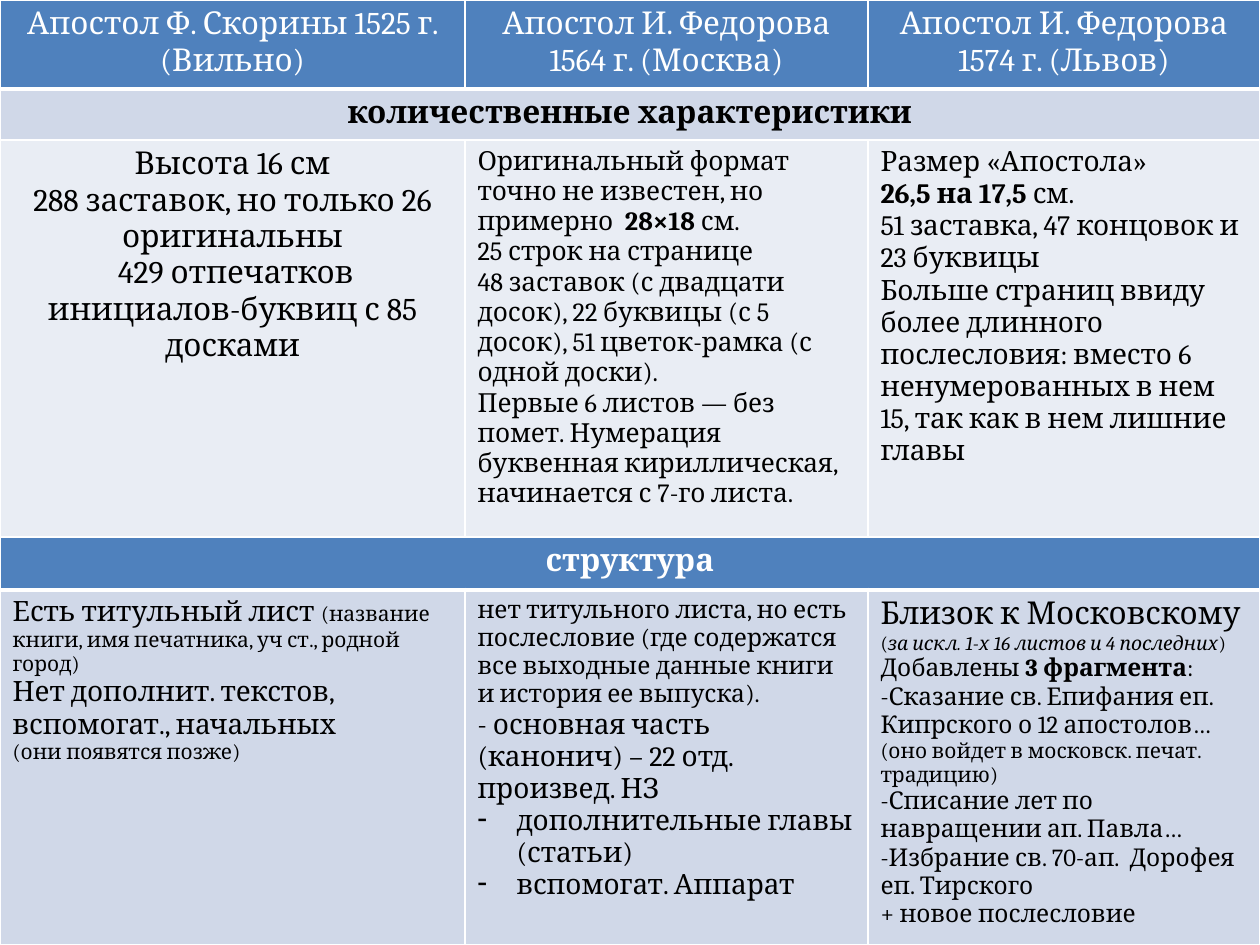
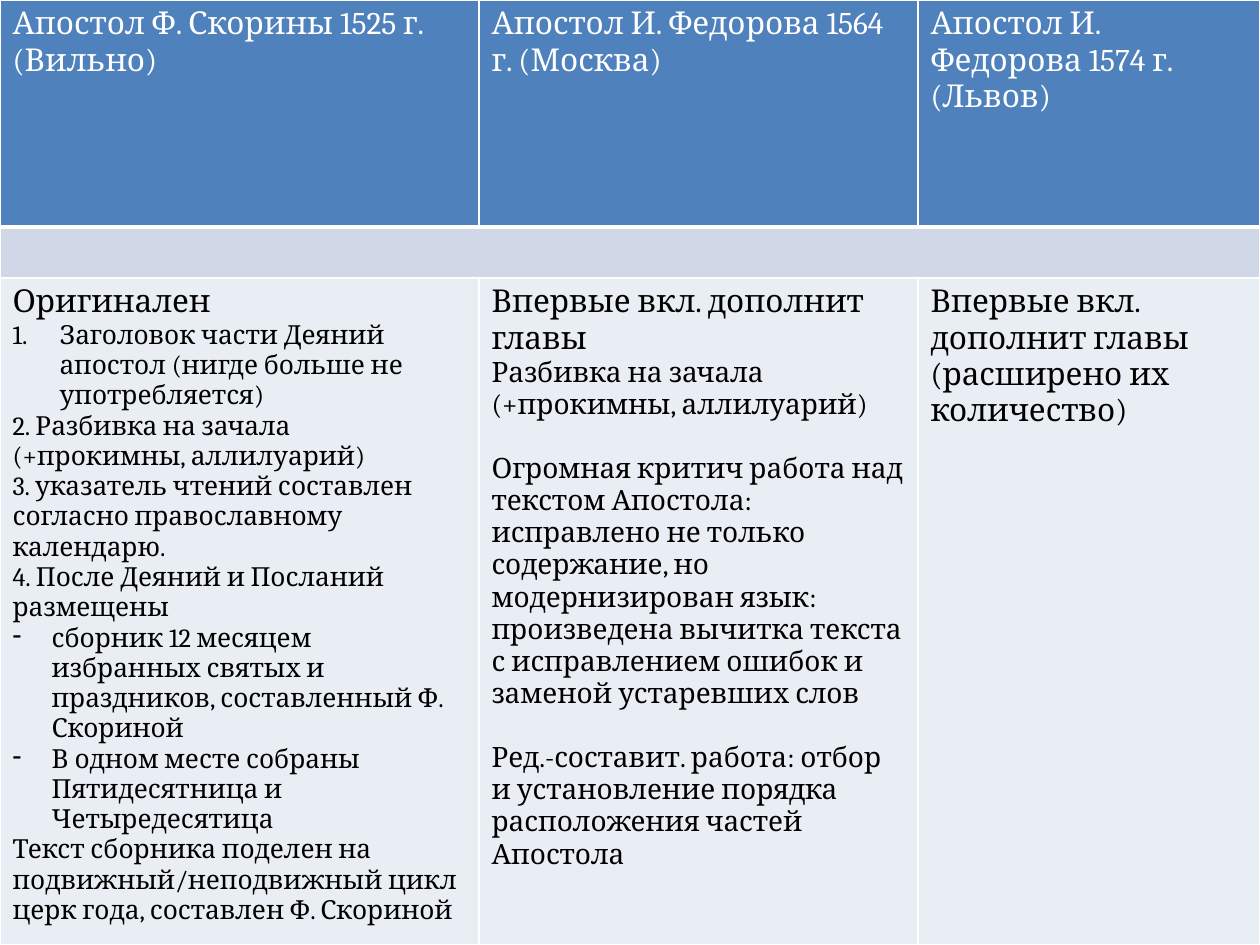
import dataclasses

import lxml.etree
import pptx
import pptx.dml.color
import pptx.enum.text
import pptx.oxml.ns
import pptx.util

EMU_PER_PIXEL = 914400 // 126
FONT = "Cambria"
WHITE, BLACK = "FFFFFF", "000000"
HEADER, BAND, LIGHT = "4F81BD", "D0D8E8", "E9EDF4"
EDGES = ("lnL", "lnR", "lnT", "lnB")
CENTER = pptx.enum.text.PP_ALIGN.CENTER
EDITIONS = (
    "Апостол Ф. Скорины 1525 г. (Вильно)",
    "Апостол И. Федорова 1564 г. (Москва)",
    "Апостол И. Федорова 1574 г. (Львов)",
)


@dataclasses.dataclass
class Line:
    runs: list
    marker: str = ""
    indent: int = 0
    gap: int = 0
    align: object = None


def px(value):
    return pptx.util.Emu(value * EMU_PER_PIXEL)


def color(value):
    return pptx.dml.color.RGBColor.from_string(value)


def line(text, size, style="", **options):
    return Line([(text, size, style)], **options)


def lines(size, *texts, **options):
    return [line(text, size, **options) for text in texts]


def dashes(size, *texts):
    return lines(size, *texts, marker="-", indent=39)


def add_element(parent, tag, **attributes):
    element = lxml.etree.SubElement(parent, pptx.oxml.ns.qn(f"a:{tag}"))
    for key, value in attributes.items():
        element.set(key, str(value))
    return element


def set_marker(paragraph, marker, indent):
    properties = paragraph._p.get_or_add_pPr()
    properties.set("marL", str(px(indent)))
    properties.set("indent", str(-px(indent)))
    if marker == "1.":
        add_element(properties, "buAutoNum", type="arabicPeriod")
    else:
        add_element(properties, "buChar", char=marker)


def set_font(font, size, style):
    font.size = pptx.util.Pt(size)
    font.bold = "b" in style
    font.italic = "i" in style


def write_lines(text_frame, content, text_color):
    for index, item in enumerate(content):
        paragraph = text_frame.paragraphs[0] if index == 0 else text_frame.add_paragraph()
        if item.align is not None:
            paragraph.alignment = item.align
        if item.gap:
            paragraph.space_before = px(item.gap)
        if item.marker:
            set_marker(paragraph, item.marker, item.indent)
        paragraph.font.name = FONT
        paragraph.font.color.rgb = color(text_color)
        for text, size, style in item.runs:
            run = paragraph.add_run()
            run.text = text
            if len(item.runs) > 1:
                set_font(run.font, size, style)
            else:
                set_font(paragraph.font, size, style)


def style_cell(cell, fill, row):
    for edge in EDGES:
        thick = (row, edge) in ((0, "lnB"), (1, "lnT"))
        border = add_element(cell._tc.get_or_add_tcPr(), edge, w=pptx.util.Pt(3 if thick else 1))
        add_element(add_element(border, "solidFill"), "srgbClr", val=WHITE)
    cell.fill.solid()
    cell.fill.fore_color.rgb = color(fill)


def add_comparison(slide, top, widths, heights, rows):
    frame = slide.shapes.add_table(len(rows), len(widths), 0, px(top), px(sum(widths)), px(sum(heights)))
    table = frame.table
    table.horz_banding = False
    for column, width in zip(table.columns, widths):
        column.width = px(width)
    for row, height in zip(table.rows, heights):
        row.height = px(height)
    for row_index, (fill, contents) in enumerate(rows):
        for column_index in range(len(widths)):
            style_cell(table.cell(row_index, column_index), fill, row_index)
        if len(contents) == 1:
            table.cell(row_index, 0).merge(table.cell(row_index, len(widths) - 1))
        text_color = WHITE if fill == HEADER else BLACK
        for column_index, content in enumerate(contents):
            write_lines(table.cell(row_index, column_index).text_frame, content, text_color)


def edition_row(align=None):
    return HEADER, [[line(name, 18, align=align)] for name in EDITIONS]


def section_row(fill, title):
    return fill, [[line(title, 18, "b", align=CENTER)]]


def add_quantities_and_structure(slide):
    widths = (465, 403, 392)
    skorina_size = lines(
        18,
        "Высота 16 см",
        "288 заставок, но только 26 оригинальны",
        " 429 отпечатков инициалов-буквиц с 85 досками",
        align=CENTER,
    )
    moscow_size = [
        Line([
            ("Оригинальный формат точно не известен, но примерно  ", 15, ""),
            ("28×18", 15, "b"),
            (" см.", 15, ""),
        ]),
        *lines(
            15,
            "25 строк на странице",
            "48 заставок (с двадцати досок), 22 буквицы (с 5 досок), 51 цветок-рамка (с одной доски).",
            "Первые 6 листов — без помет. Нумерация буквенная кириллическая, начинается с 7-го листа. ",
        ),
    ]
    lviv_size = [
        line("Размер «Апостола»", 16),
        Line([("26,5 на 17,5 ", 16, "b"), ("см.", 16, "")]),
        *lines(
            16,
            "51 заставка, 47 концовок и 23 буквицы",
            "Больше страниц ввиду более длинного послесловия: вместо 6 ненумерованных в нем 15, "
            "так как в нем лишние главы",
        ),
    ]
    add_comparison(slide, 0, widths, (89, 51, 400), [
        edition_row(CENTER),
        section_row(BAND, "количественные характеристики"),
        (LIGHT, [skorina_size, moscow_size, lviv_size]),
    ])

    skorina_structure = [
        Line([
            ("Есть титульный лист ", 16, ""),
            ("(название книги, имя печатника, уч ст., родной город)", 12, ""),
        ]),
        line("Нет дополнит. текстов, вспомогат., начальных", 16),
        line("(они появятся позже)", 12),
    ]
    moscow_structure = [
        line("нет титульного листа, но есть послесловие (где содержатся все выходные данные книги "
             "и история ее выпуска).", 14),
        line("- основная часть (канонич) – 22 отд. произвед. НЗ", 16),
        *dashes(16, "дополнительные главы (статьи)", "вспомогат. Аппарат"),
    ]
    lviv_structure = [
        line("Близок к Московскому", 18),
        Line([("(", 11, ""), ("за искл. 1-х 16 листов и 4 последних", 11, "i"), (")", 11, "")]),
        Line([("Добавлены ", 14, ""), ("3 фрагмента", 14, "b"), (":", 14, "")]),
        Line([
            ("-Сказание св. Епифания еп. Кипрского о 12 апостолов… ", 14, ""),
            ("(оно войдет в московск. печат. традицию)", 12, ""),
        ]),
        *lines(
            14,
            "-Списание лет по навращении ап. Павла…",
            "-Избрание св. 70-ап.  Дорофея еп. Тирского",
            "+ новое послесловие",
        ),
    ]
    add_comparison(slide, 537, widths, (53, 355), [
        section_row(HEADER, "структура"),
        (BAND, [skorina_structure, moscow_structure, lviv_structure]),
    ])


def add_contents(slide):
    skorina = [
        line("Оригинален", 18),
        line("Заголовок части Деяний апостол (нигде больше не употребляется)", 15, marker="1.", indent=47),
        *lines(
            15,
            "2. Разбивка на зачала (+прокимны, аллилуарий)",
            "3. указатель чтений составлен согласно православному календарю.",
            "4. После Деяний и Посланий размещены",
        ),
        *dashes(
            15,
            "сборник 12 месяцем избранных святых и праздников, составленный Ф. Скориной",
            "В одном месте собраны Пятидесятница и Четыредесятица",
        ),
        line("Текст сборника поделен на подвижный/неподвижный цикл церк года, составлен Ф. Скориной", 15),
    ]
    moscow = [
        line("Впервые вкл. дополнит главы", 18),
        line("Разбивка на зачала (+прокимны, аллилуарий)", 16),
        line("Огромная критич работа над текстом Апостола: исправлено не только содержание, "
             "но модернизирован язык:", 16, gap=32),
        line("произведена вычитка текста с исправлением ошибок и заменой устаревших слов", 16),
        line("Ред.-составит. работа: отбор и установление порядка расположения частей Апостола",
             16, gap=32),
    ]
    lviv = lines(18, "Впервые вкл. дополнит главы", "(расширено их количество)")
    add_comparison(slide, 0, (479, 439, 342), (227, 51, 667), [
        edition_row(),
        (BAND, [[]]),
        (LIGHT, [skorina, moscow, lviv]),
    ])


def main():
    presentation = pptx.Presentation()
    presentation.slide_width = px(1260)
    presentation.slide_height = px(945)
    blank = presentation.slide_layouts[6]
    for fill_slide in (add_quantities_and_structure, add_contents):
        fill_slide(presentation.slides.add_slide(blank))
    presentation.save("out.pptx")


if __name__ == "__main__":
    main()
